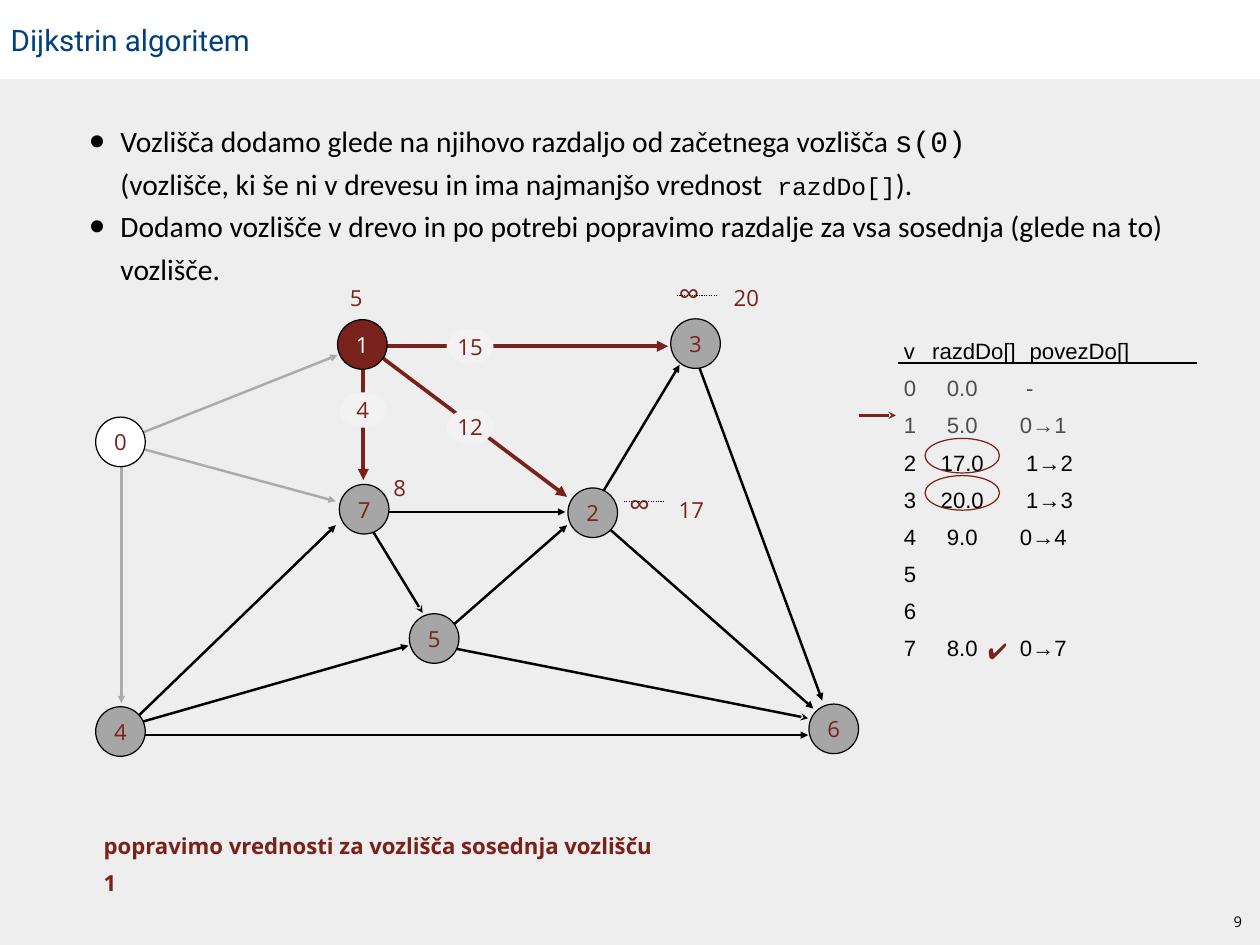
from lxml.etree import SubElement
from pptx import Presentation
from pptx.dml.color import RGBColor
from pptx.enum.dml import MSO_LINE_DASH_STYLE as DASH
from pptx.enum.shapes import MSO_CONNECTOR as CONNECTOR, MSO_SHAPE as SHAPE
from pptx.enum.text import MSO_ANCHOR as ANCHOR, PP_ALIGN as ALIGN
from pptx.oxml.ns import qn
from pptx.util import Inches, Pt

BLACK = RGBColor(0x00, 0x00, 0x00)
WHITE = RGBColor(0xFF, 0xFF, 0xFF)
BACKGROUND = RGBColor(0xEE, 0xEE, 0xEE)
TITLE_BLUE = RGBColor(0x00, 0x40, 0x80)
RED = RGBColor(0x79, 0x21, 0x1B)
NODE_GREY = RGBColor(0xA6, 0xA6, 0xA6)
EDGE_GREY = RGBColor(0xAB, 0xAB, 0xAB)
WEIGHT_GREY = RGBColor(0xF2, 0xF2, 0xF2)
DONE_GREY = RGBColor(0x4D, 0x4D, 0x4D)

NODE_SIZE = 0.56
WEIGHT_SIZE = (0.53, 0.4)

# label, left, top, fill, text colour
NODES = [
    ("0", 1.08, 4.71, WHITE, RED),
    ("4", 1.08, 7.98, NODE_GREY, RED),
    ("7", 3.83, 5.47, NODE_GREY, RED),
    ("1", 3.81, 3.61, RED, WHITE),
    ("3", 7.57, 3.6, NODE_GREY, RED),
    ("5", 4.62, 6.93, NODE_GREY, RED),
    ("2", 6.41, 5.51, NODE_GREY, RED),
    ("6", 9.13, 7.95, NODE_GREY, RED),
]

# start, arrow tip, colour, width, arrowhead
EDGES = [
    ((5.02, 7.3), (9.12, 8.11), BLACK, 2, "stealth"),
    ((1.41, 8.23), (3.79, 5.93), BLACK, 2, "triangle"),
    ((4.05, 5.78), (6.38, 5.78), BLACK, 2, "triangle"),
    ((4.1, 3.88), (4.1, 5.42), RED, 3, "triangle"),
    ((7.83, 3.98), (9.28, 7.91), BLACK, 2, "triangle"),
    ((6.62, 5.86), (7.67, 4.12), BLACK, 2, "triangle"),
    ((6.83, 5.93), (9.18, 8), BLACK, 2, "triangle"),
    ((1.36, 8.3), (9.12, 8.3), BLACK, 2, "triangle"),
    ((1.37, 5.15), (1.37, 7.94), EDGE_GREY, 2, "triangle"),
    ((1.39, 5.01), (3.79, 5.66), EDGE_GREY, 2, "triangle"),
    ((1.42, 4.96), (3.81, 4.01), EDGE_GREY, 2, "triangle"),
    ((4.17, 3.93), (6.4, 5.61), RED, 3, "triangle"),
    ((4.08, 3.91), (7.54, 3.91), RED, 3, "triangle"),
    ((4.05, 5.74), (4.77, 6.92), BLACK, 2, "stealth"),
    ((4.94, 7.21), (6.4, 5.93), BLACK, 2, "triangle"),
    ((1.36, 8.22), (4.61, 7.29), BLACK, 2, "triangle"),
]

WEIGHTS = [("4", 3.83, 4.43), ("15", 5.04, 3.71), ("12", 5.04, 4.62)]

# text, left, top, width, size, line spacing
DISTANCES = [
    ("∞", 7.04, 5.49, 0.47, 24, 1),
    ("∞", 7.6, 3.1, 0.47, 24, 1),
    ("5", 3.89, 3.21, 0.35, 18, 1),
    ("17", 7.6, 5.61, 0.51, 18, 1),
    ("20", 8.22, 3.21, 0.51, 18, 1),
    ("8", 4.38, 5.24, 0.35, 18, 1.4),
    ("✔", 11.09, 7.08, 0.4, 18, 1.4),
]

HEADER_TABS = [(0.32, "l"), (1.42, "l")]
NARROW_TABS = [(0.66, "ctr"), (1.31, "l")]
WIDE_TABS = [(0.66, "ctr"), (1.38, "l")]

# text, tab stops, colour
DISTANCE_ROWS = [
    ("v\trazdDo[]\tpovezDo[]", HEADER_TABS, BLACK),
    ("0\t0.0\t-", WIDE_TABS, DONE_GREY),
    ("1\t5.0\t0→1", NARROW_TABS, DONE_GREY),
    ("2\t17.0\t1→2", WIDE_TABS, BLACK),
    ("3\t20.0\t1→3", WIDE_TABS, BLACK),
    ("4\t9.0\t0→4", NARROW_TABS, BLACK),
    ("5", [], BLACK),
    ("6", [], BLACK),
    ("7\t8.0\t0→7", NARROW_TABS, BLACK),
]

# each bullet is a list of runs: text, font, size
BULLETS = [
    [("Vozlišča dodamo glede na njihovo razdaljo od začetnega vozlišča ", "Calibri", 24),
     ("s(0)", "Courier New", 24),
     ("\n", "Calibri", 24),
     ("(vozlišče, ki še ni v drevesu in ima najmanjšo vrednost", "Calibri", 24),
     (" razdDo[]", "Courier New", 20),
     (").", "Calibri", 24)],
    [("Dodamo vozlišče v drevo in po potrebi popravimo razdalje za vsa sosednja "
      "(glede na to) vozlišče.", "Calibri", 24)],
]


class GraphSlide:
    font = "Open Sans"

    def __init__(self, slide):
        self.slide = slide
        slide.background.fill.solid()
        slide.background.fill.fore_color.rgb = BACKGROUND

    def style_run(self, run, size, color, font=None, bold=False):
        run.font.name = font or self.font
        run.font.size = Pt(size)
        run.font.color.rgb = color
        run.font.bold = bold

    def set_margins(self, text_frame, left, top, right, bottom):
        text_frame.margin_left, text_frame.margin_top = Inches(left), Inches(top)
        text_frame.margin_right, text_frame.margin_bottom = Inches(right), Inches(bottom)

    def shape(self, preset, left, top, width, height, fill=None, line=None):
        shape = self.slide.shapes.add_shape(
            preset, Inches(left), Inches(top), Inches(width), Inches(height))
        shape.shadow.inherit = False
        if fill is None:
            shape.fill.background()
        else:
            shape.fill.solid()
            shape.fill.fore_color.rgb = fill
        if line is None:
            shape.line.fill.background()
        else:
            shape.line.color.rgb = line
            shape.line.width = Pt(1)
        return shape

    def label(self, shape, text, size, color, align=ALIGN.CENTER, left_margin=0, font=None):
        text_frame = shape.text_frame
        self.set_margins(text_frame, left_margin, 0, 0, 0)
        text_frame.vertical_anchor = ANCHOR.MIDDLE
        text_frame.text = text
        paragraph = text_frame.paragraphs[0]
        paragraph.alignment = align
        self.style_run(paragraph.runs[0], size, color, font)

    def text_box(self, left, top, width, height):
        box = self.slide.shapes.add_textbox(
            Inches(left), Inches(top), Inches(width), Inches(height))
        box.text_frame.word_wrap = True
        self.set_margins(box.text_frame, 0.06, 0, 0.06, 0)
        return box

    def text(self, text, left, top, width, height, size=18, spacing=1, bold=False):
        paragraph = self.text_box(left, top, width, height).text_frame.paragraphs[0]
        paragraph.text = text
        paragraph.line_spacing = spacing
        self.style_run(paragraph.runs[0], size, RED, bold=bold)

    def bullets(self, items, left, top, width, height):
        text_frame = self.text_box(left, top, width, height).text_frame
        self.set_margins(text_frame, 0.06, 0.06, 0.18, 0.06)
        for index, runs in enumerate(items):
            paragraph = text_frame.add_paragraph() if index else text_frame.paragraphs[0]
            paragraph.line_spacing = 1.2
            properties = paragraph._p.get_or_add_pPr()
            properties.set("marL", str(Inches(0.41)))
            properties.set("indent", str(Inches(-0.35)))
            SubElement(properties, qn("a:buSzPct"), val="150000")
            SubElement(properties, qn("a:buFont"), typeface="Arial")
            SubElement(properties, qn("a:buChar"), char="•")
            for text, font, size in runs:
                if text == "\n":
                    paragraph.add_line_break()
                    continue
                run = paragraph.add_run()
                run.text = text
                self.style_run(run, size, BLACK, font)

    def tabbed_rows(self, rows, left, top, width, height):
        text_frame = self.text_box(left, top, width, height).text_frame
        text_frame.text = "\n".join(text for text, _, _ in rows)
        for paragraph, (_, tabs, color) in zip(text_frame.paragraphs, rows):
            paragraph.line_spacing = 1.4
            self.style_run(paragraph.runs[0], 18, color, "Arial")
            if tabs:
                tab_list = SubElement(paragraph._p.get_or_add_pPr(), qn("a:tabLst"))
                for position, align in tabs:
                    SubElement(tab_list, qn("a:tab"), pos=str(Inches(position)), algn=align)

    def line(self, start, end, color=BLACK, width=1, arrow=None, dash=None):
        connector = self.slide.shapes.add_connector(
            CONNECTOR.STRAIGHT, *(Inches(value) for value in (*start, *end)))
        connector.line.color.rgb = color
        connector.line.width = Pt(width)
        if dash:
            connector.line.dash_style = dash
        if arrow:
            SubElement(connector.line._get_or_add_ln(), qn("a:tailEnd"), type=arrow)
        SubElement(connector._element.spPr, qn("a:effectLst"))


def main():
    presentation = Presentation()
    presentation.slide_width, presentation.slide_height = Inches(14.22), Inches(10.67)
    graph = GraphSlide(presentation.slides.add_slide(presentation.slide_layouts[6]))

    graph.label(graph.text_box(13.8, 10.25, 0.34, 0.32), "9", 12, BLACK)
    graph.bullets(BULLETS, 0.89, 1.25, 12.44, 8.89)
    title = graph.shape(SHAPE.RECTANGLE, 0, 0, 14.22, 0.89, WHITE)
    graph.label(title, "Dijkstrin algoritem", 24, TITLE_BLUE, ALIGN.LEFT, 0.12, "Roboto")

    for edge in EDGES:
        graph.line(*edge)
    for name, left, top, fill, color in NODES:
        node = graph.shape(SHAPE.OVAL, left, top, NODE_SIZE, NODE_SIZE, fill, BLACK)
        graph.label(node, name, 18, color)
    for weight, left, top in WEIGHTS:
        graph.label(graph.shape(SHAPE.OVAL, left, top, *WEIGHT_SIZE, WEIGHT_GREY), weight, 18, RED)

    graph.text("popravimo vrednosti za vozlišča sosednja vozlišču 1",
               1.11, 9.28, 6.45, 0.84, spacing=1.4, bold=True)
    graph.tabbed_rows(DISTANCE_ROWS, 10.14, 3.69, 2.69, 3.82)
    graph.line((10.13, 4.1), (13.51, 4.1))
    graph.line((9.69, 4.69), (10.11, 4.69), RED, 2, "stealth")
    for top in (4.95, 5.37):
        graph.shape(SHAPE.OVAL, 10.44, top, 0.84, 0.39, line=RED)

    for text, left, top, width, size, spacing in DISTANCES:
        graph.text(text, left, top, width, 0.4, size, spacing)
    for left, top in ((7.04, 5.66), (7.64, 3.34)):
        graph.line((left, top), (left + 0.45, top), dash=DASH.ROUND_DOT)

    presentation.save("out.pptx")


if __name__ == "__main__":
    main()
